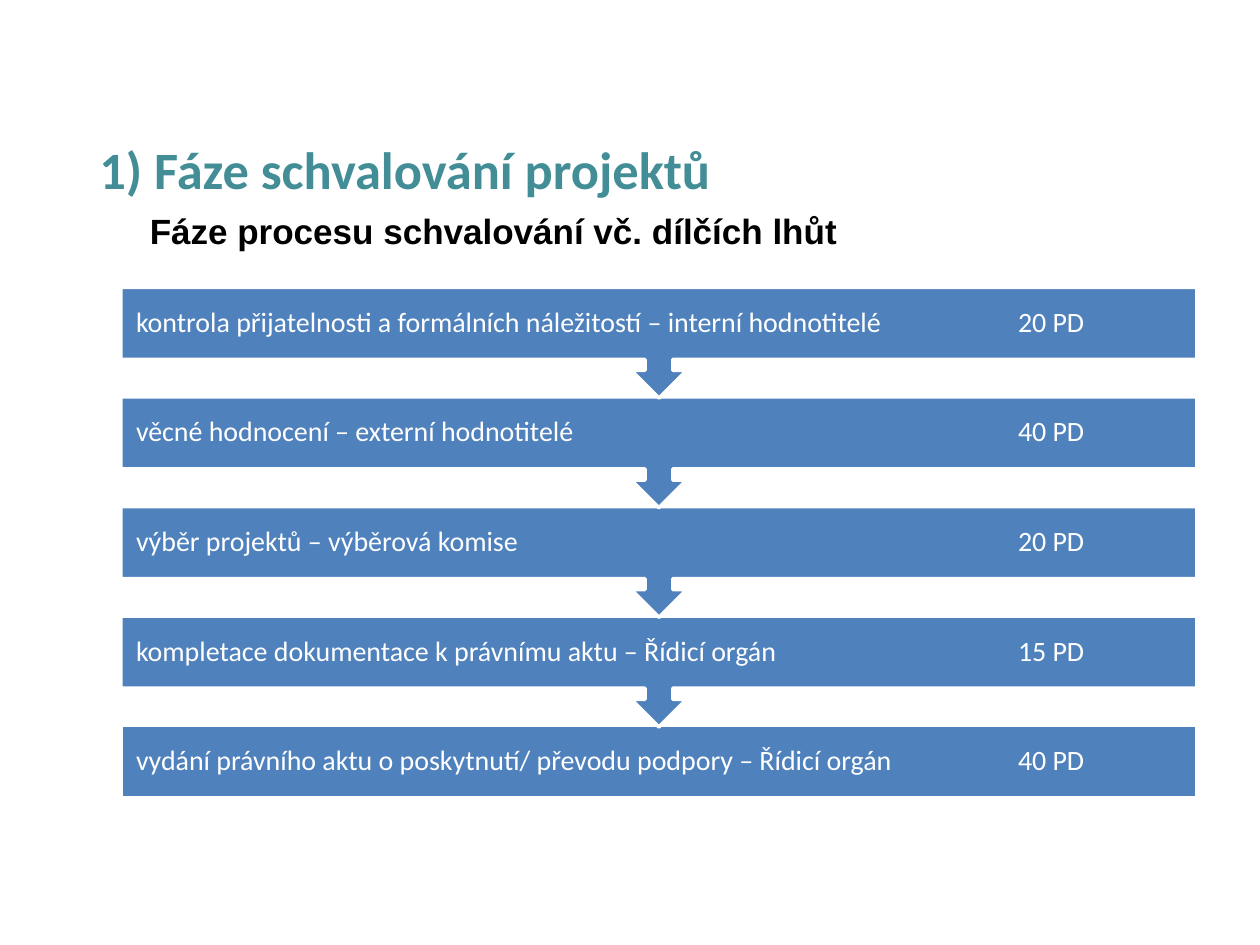
from lxml import etree
from pptx import Presentation
from pptx.dml.color import RGBColor
from pptx.enum.shapes import MSO_SHAPE
from pptx.enum.text import MSO_ANCHOR, PP_ALIGN
from pptx.oxml.ns import qn
from pptx.util import Inches, Pt

RECTANGLE = MSO_SHAPE.RECTANGLE
CALLOUT = MSO_SHAPE.DOWN_ARROW_CALLOUT
MIDDLE, TOP = MSO_ANCHOR.MIDDLE, MSO_ANCHOR.TOP
LEFT, JUSTIFY = PP_ALIGN.LEFT, PP_ALIGN.JUSTIFY

WHITE, BLACK, BLUE, TEAL = "FFFFFF", "000000", "4F81BD", "428D96"

PHASES = [
    ("kontrola přijatelnosti a formálních náležitostí – interní hodnotitelé", "20 PD"),
    ("věcné hodnocení – externí hodnotitelé", "40 PD"),
    ("výběr projektů – výběrová komise", "20 PD"),
    ("kompletace dokumentace k právnímu aktu – Řídicí orgán", "15 PD"),
    ("vydání právního aktu o poskytnutí/ převodu podpory – Řídicí orgán", "40 PD"),
]
PHASE_LEFT, PHASE_TOP, PHASE_WIDTH = 0.96, 2.28, 8.54
PHASE_PITCH, BAR_HEIGHT, CALLOUT_HEIGHT = 0.87, 0.57, 0.88
DEADLINE_TAB = 7.0


def color(value):
    return RGBColor.from_string(value)


def style_font(font, name, size, value, bold=False):
    font.name = name
    font.size = Pt(size)
    font.bold = bold
    font.color.rgb = color(value)


def indent(paragraph, left, first=0):
    properties = paragraph._p.get_or_add_pPr()
    properties.set("marL", str(Inches(left)))
    properties.set("indent", str(Inches(first)))


def add_tab_stop(paragraph, position):
    tabs = etree.SubElement(paragraph._p.get_or_add_pPr(), qn("a:tabLst"))
    etree.SubElement(tabs, qn("a:tab"), pos=str(Inches(position)), algn="l")


def add_heading(slide, text, top, height, anchor):
    """Add a one-line text box and return its paragraph and run font."""
    box = slide.shapes.add_textbox(Inches(0.69), Inches(top), Inches(8.62), Inches(height))
    frame = box.text_frame
    frame.word_wrap = True
    frame.vertical_anchor = anchor
    frame.text = text
    paragraph = frame.paragraphs[0]
    return paragraph, paragraph.runs[0].font


def add_phase(slide, index, phase, deadline):
    """Add one process bar; every bar but the last points down to the next."""
    is_last = index == len(PHASES) - 1
    bar = slide.shapes.add_shape(
        RECTANGLE if is_last else CALLOUT,
        Inches(PHASE_LEFT), Inches(PHASE_TOP + index * PHASE_PITCH),
        Inches(PHASE_WIDTH), Inches(BAR_HEIGHT if is_last else CALLOUT_HEIGHT))
    bar.shadow.inherit = False
    bar.fill.solid()
    bar.fill.fore_color.rgb = color(BLUE)
    bar.line.color.rgb = color(WHITE)
    bar.line.width = Pt(2)

    frame = bar.text_frame
    frame.word_wrap = True
    frame.vertical_anchor = MIDDLE
    frame.margin_left = frame.margin_right = Inches(0.12)
    frame.margin_top = frame.margin_bottom = Inches(0.12)
    frame.text = f"{phase}\t{deadline}"
    paragraph = frame.paragraphs[0]
    paragraph.alignment = LEFT
    paragraph.line_spacing = 0.9
    add_tab_stop(paragraph, DEADLINE_TAB)
    style_font(paragraph.runs[0].font, "Calibri", 16, WHITE)


def main():
    presentation = Presentation()
    presentation.slide_width, presentation.slide_height = Inches(10), Inches(7.5)
    slide = presentation.slides.add_slide(presentation.slide_layouts[6])

    title, title_font = add_heading(slide, "1) Fáze schvalování projektů", 0.88, 0.98, MIDDLE)
    title.line_spacing = 0.9
    indent(title, 0.62, -0.62)
    style_font(title_font, "Calibri", 30, TEAL, bold=True)

    subtitle, subtitle_font = add_heading(
        slide, "Fáze procesu schvalování vč. dílčích lhůt", 1.61, 0.5, TOP)
    subtitle.alignment = JUSTIFY
    indent(subtitle, 0.4)
    style_font(subtitle_font, "Arial", 20, BLACK, bold=True)

    # Later phases lie behind, so each arrow tip stays on top of the next bar.
    for index, (phase, deadline) in reversed(list(enumerate(PHASES))):
        add_phase(slide, index, phase, deadline)

    presentation.save("out.pptx")


if __name__ == "__main__":
    main()
